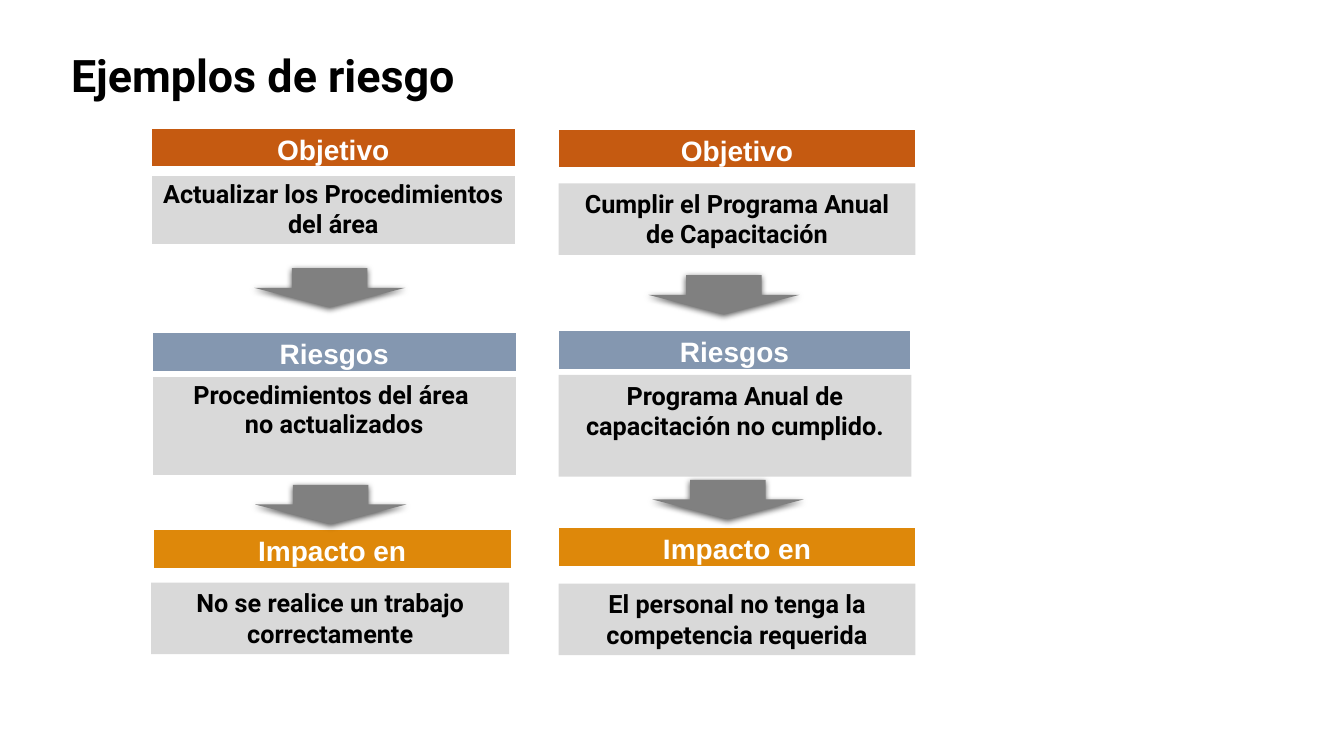
from lxml import etree
from pptx import Presentation
from pptx.dml.color import RGBColor
from pptx.enum.shapes import MSO_SHAPE
from pptx.enum.text import MSO_ANCHOR, PP_ALIGN
from pptx.oxml.ns import qn
from pptx.util import Inches, Pt

RECT = MSO_SHAPE.RECTANGLE
DOWN_ARROW = MSO_SHAPE.DOWN_ARROW
CENTER = PP_ALIGN.CENTER
MIDDLE, TOP = MSO_ANCHOR.MIDDLE, MSO_ANCHOR.TOP

COLORS = {
    "black": "000000",
    "white": "FFFFFF",
    "objective": "C55A11",
    "risk": "8497B0",
    "impact": "DE880A",
    "panel": "D9D9D9",
    "arrow": "808080",
}
GRID_COLS, GRID_ROWS = 133.3, 75
SLIDE_W, SLIDE_H = Inches(13.33), Inches(7.5)
HEADING_H, ARROW_W, ARROW_H = 4, 15, 3.9
BORDERS = {"a:lnL": 1, "a:lnR": 1, "a:lnT": 1, "a:lnB": 3}

HEADINGS = [
    ("Objetivo", "objective", [(15, 12.7, 36.1), (55.4, 12.8, 35.4)]),
    ("Riesgos", "risk", [(15.1, 33, 36.1), (55.4, 32.8, 34.9)]),
    ("Impacto en", "impact", [(15.2, 52.5, 35.5), (55.4, 52.3, 35.4)]),
]
TABLE_PANELS = [
    (["Actualizar los Procedimientos del área"], (15, 17.4, 36.1, 7)),
    (["Procedimientos del área ", "no actualizados"], (15.1, 37.3, 36.1, 10)),
]
BOX_PANELS = [
    ("Cumplir el Programa Anual de Capacitación", (55.4, 18.2, 35.4, 7.1)),
    ("Programa Anual de capacitación no cumplido.", (55.4, 37.2, 35, 10.1)),
    ("No se realice un trabajo correctamente", (15, 57.8, 35.5, 7.1)),
    ("El personal no tenga la competencia requerida", (55.4, 57.9, 35.4, 7.1)),
]
ARROWS = [(25.2, 26.6), (64.3, 27.3), (25.3, 48.1), (64.7, 47.6)]


def rgb(color):
    return RGBColor.from_string(COLORS[color])


def place(col, row, cols, rows):
    return (
        round(SLIDE_W * col / GRID_COLS),
        round(SLIDE_H * row / GRID_ROWS),
        round(SLIDE_W * cols / GRID_COLS),
        round(SLIDE_H * rows / GRID_ROWS),
    )


def write(frame, lines, size, font="Roboto", color="black", spacing=None):
    frame.word_wrap = True
    for index, line in enumerate(lines):
        paragraph = frame.add_paragraph() if index else frame.paragraphs[0]
        paragraph.alignment = CENTER
        if spacing:
            paragraph.line_spacing = spacing
        run = paragraph.add_run()
        run.text = line
        run.font.name = font
        run.font.size = Pt(size)
        run.font.bold = True
        run.font.color.rgb = rgb(color)


def add_title(slide, title, area):
    write(slide.shapes.add_textbox(*place(*area)).text_frame, [title], 32)


def add_cell(slide, area, fill):
    table = slide.shapes.add_table(1, 1, *place(*area)).table
    table.first_row = table.horz_banding = False
    cell = table.cell(0, 0)
    cell.fill.solid()
    cell.fill.fore_color.rgb = rgb(fill)
    properties = cell._tc.get_or_add_tcPr()
    for position, (side, width) in enumerate(BORDERS.items()):
        border = etree.Element(qn(side), w=str(Pt(width)))
        solid = etree.SubElement(border, qn("a:solidFill"))
        etree.SubElement(solid, qn("a:srgbClr"), val=COLORS["white"])
        properties.insert(position, border)
    return cell


def add_heading(slide, label, fill, col, row, cols):
    cell = add_cell(slide, (col, row, cols, HEADING_H), fill)
    cell.vertical_anchor = MIDDLE
    cell.margin_left = cell.margin_right = Inches(0.07)
    cell.margin_top = cell.margin_bottom = 0
    write(cell.text_frame, [label], 20, "Arial", "white", 1.15)


def add_filled_shape(slide, kind, area, fill):
    shape = slide.shapes.add_shape(kind, *place(*area))
    shape.shadow.inherit = False
    shape.fill.solid()
    shape.fill.fore_color.rgb = rgb(fill)
    shape.line.fill.background()
    return shape


def add_box_panel(slide, text, area):
    panel = add_filled_shape(slide, RECT, area, "panel")
    panel.text_frame.vertical_anchor = TOP
    write(panel.text_frame, [text], 18)


def add_arrow(slide, col, row):
    area = (col, row, ARROW_W, ARROW_H)
    arrow = add_filled_shape(slide, DOWN_ARROW, area, "arrow")
    effects = arrow._element.spPr.find(qn("a:effectLst"))
    shadow = etree.SubElement(
        effects, qn("a:outerShdw"), blurRad=str(Pt(4.5)),
        dist=str(Pt(1.5)), dir="5400000", rotWithShape="0")
    tint = etree.SubElement(shadow, qn("a:srgbClr"), val=COLORS["black"])
    etree.SubElement(tint, qn("a:alpha"), val="63000")


def main():
    deck = Presentation()
    deck.slide_width, deck.slide_height = SLIDE_W, SLIDE_H
    slide = deck.slides.add_slide(deck.slide_layouts[6])
    add_title(slide, "Ejemplos de riesgo", (-13.2, 4.2, 78.6, 13.1))
    for text, area in BOX_PANELS:
        add_box_panel(slide, text, area)
    for lines, area in TABLE_PANELS:
        write(add_cell(slide, area, "panel").text_frame, lines, 18)
    for label, fill, spots in HEADINGS:
        for spot in spots:
            add_heading(slide, label, fill, *spot)
    for spot in ARROWS:
        add_arrow(slide, *spot)
    deck.save("out.pptx")


if __name__ == "__main__":
    main()
